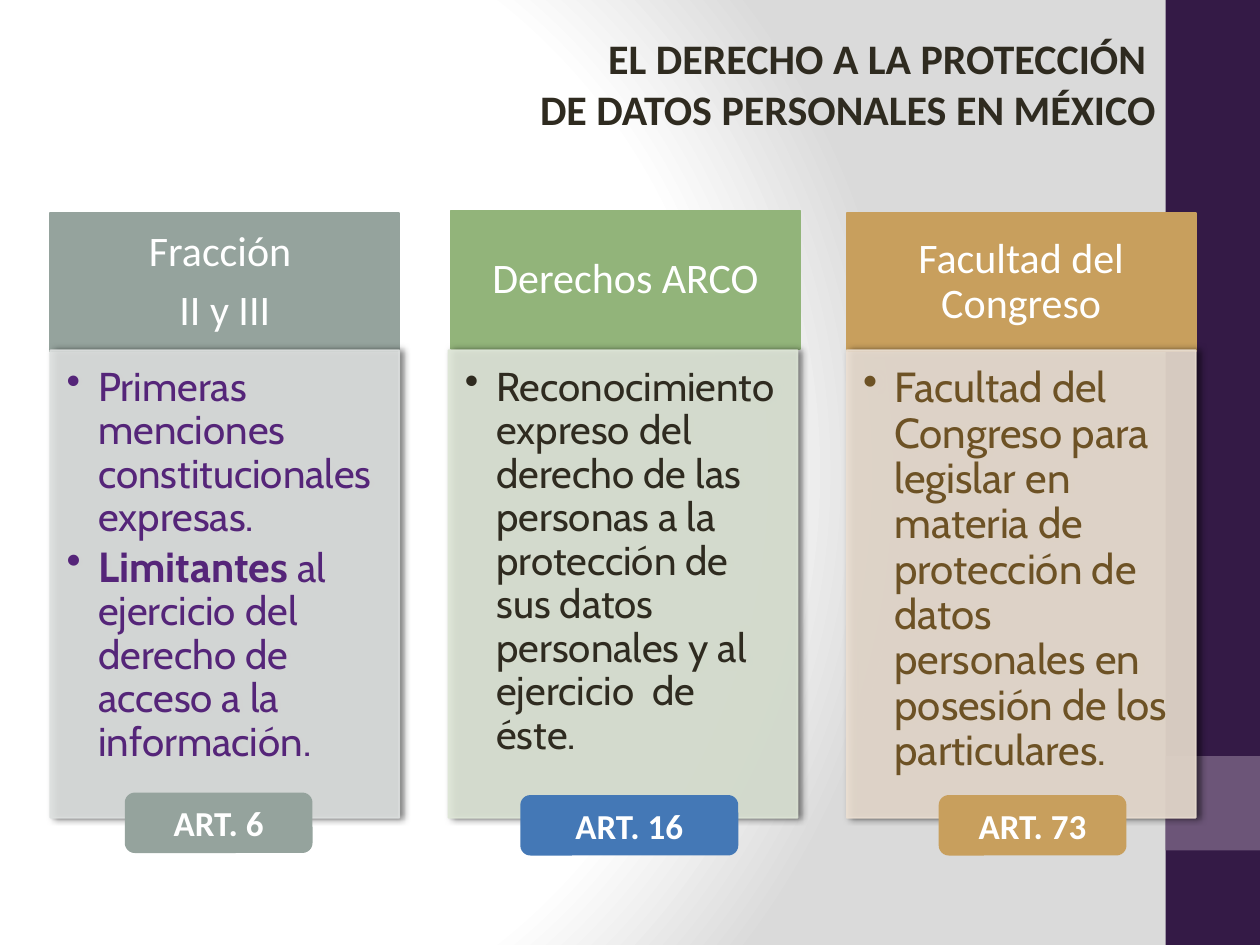
from pptx import Presentation
from pptx.dml.color import RGBColor
from pptx.enum.shapes import MSO_SHAPE as Shape
from pptx.enum.text import MSO_ANCHOR as Anchor, PP_ALIGN as Align
from pptx.oxml import parse_xml
from pptx.oxml.ns import nsdecls, qn
from pptx.util import Inches, Pt
from lxml.etree import SubElement

COLUMNS, ROWS = 40, 30  # quarter-inch grid
HEADING, BODY = "Calibri", "Cabin"
WHITE, DARK = "FFFFFF", "2F2B20"


def color(value):
    return RGBColor.from_string(value)


class SlideBuilder:
    def __init__(self, presentation):
        self.slide = presentation.slides.add_slide(presentation.slide_layouts[6])
        self.column = presentation.slide_width / COLUMNS
        self.row = presentation.slide_height / ROWS

    def place(self, left, top, width, height):
        return (round(left * self.column), round(top * self.row),
                round(width * self.column), round(height * self.row))

    def background(self, inner, outer):
        stops = "".join(
            f'<a:gs pos="{position}000"><a:srgbClr val="{value}"/></a:gs>'
            for position, value in ((0, inner), (75, inner), (100, outer)))
        fill = parse_xml(
            f'<p:bg {nsdecls("p", "a")}><p:bgPr><a:gradFill rotWithShape="1">'
            f'<a:gsLst>{stops}</a:gsLst><a:path path="circle">'
            '<a:fillToRect l="20000" t="50000" r="100000" b="50000"/></a:path>'
            '</a:gradFill><a:effectLst/></p:bgPr></p:bg>')
        self.slide.element.find(qn("p:cSld")).insert(0, fill)

    def block(self, area, fill, outlined=False, kind=Shape.RECTANGLE):
        shape = self.slide.shapes.add_shape(kind, *self.place(*area))
        shape.shadow.inherit = False
        shape.fill.solid()
        shape.fill.fore_color.rgb = color(fill)
        if outlined:
            shape.line.color.rgb = color(fill)
            shape.line.width = Pt(1)
        else:
            shape.line.fill.background()
        return shape

    def frame(self, shape, margins, anchor):
        frame = shape.text_frame
        frame.word_wrap = True
        frame.vertical_anchor = anchor
        (frame.margin_left, frame.margin_top,
         frame.margin_right, frame.margin_bottom) = map(Inches, margins)
        return frame

    def add_text(self, frame, paragraphs, font, size, ink, align,
                 bold=False, spacing=None, after=0, bullet=False):
        """Each paragraph is a list of (text, emphasised) runs."""
        for index, runs in enumerate(paragraphs):
            paragraph = frame.add_paragraph() if index else frame.paragraphs[0]
            if bullet:
                properties = paragraph._p.get_or_add_pPr()
                properties.set("marL", str(Inches(0.25)))
                properties.set("indent", str(-Inches(0.25)))
                SubElement(properties, qn("a:buChar")).set("char", "•")
            paragraph.alignment = align
            paragraph.space_after = Pt(after)
            if spacing:
                paragraph.line_spacing = spacing
            paragraph.font.name = font
            paragraph.font.size = Pt(size)
            paragraph.font.bold = bold
            paragraph.font.color.rgb = color(ink)
            for text, emphasised in runs:
                run = paragraph.add_run()
                run.text = text
                if emphasised:
                    run.font.bold = True
                    run.font.size = Pt(size + 1)

    def title(self, area, lines):
        box = self.slide.shapes.add_textbox(*self.place(*area))
        frame = self.frame(box, (0.1, 0.05, 0.1, 0.05), Anchor.TOP)
        self.add_text(frame, [[(line, False)] for line in lines],
                      HEADING, 24, DARK, Align.RIGHT, bold=True)

    def header(self, area, fill, lines):
        shape = self.block(area, fill, outlined=True)
        frame = self.frame(shape, (0.19, 0.11, 0.19, 0.11), Anchor.MIDDLE)
        self.add_text(frame, [[(line, False)] for line in lines],
                      HEADING, 24, WHITE, Align.CENTER, spacing=0.9, after=8)

    def panel(self, area, fill, paragraphs, size, ink):
        shape = self.block(area, fill, outlined=True)
        properties = shape.element.spPr
        for tint in list(properties.iter(qn("a:srgbClr"))):
            SubElement(tint, qn("a:alpha")).set("val", "90000")
        effects = properties.find(qn("a:effectLst"))
        effects.append(parse_xml(
            f'<a:outerShdw {nsdecls("a")} blurRad="{Pt(4)}" dist="{Pt(2)}" dir="0" '
            'algn="tl" rotWithShape="0"><a:srgbClr val="000000">'
            '<a:alpha val="60000"/></a:srgbClr></a:outerShdw>'))
        frame = self.frame(shape, (0.13, 0.13, 0.18, 0.2), Anchor.TOP)
        self.add_text(frame, paragraphs, BODY, size, ink, Align.LEFT,
                      spacing=0.9, after=3, bullet=True)

    def badge(self, area, fill, text):
        shape = self.block(area, fill, kind=Shape.ROUNDED_RECTANGLE)
        frame = self.frame(shape, (0.1, 0.05, 0.1, 0.05), Anchor.MIDDLE)
        self.add_text(frame, [[(text, False)]], HEADING, 20, WHITE, Align.CENTER, bold=True)


# Header position is (left shift from the card, top); badge is (left, top, width, fill, text)
CARDS = [
    dict(header=(0, 6.76), fill="95A39D", lines=["Fracción ", "II y III"],
         tint="DDE0DF", size=23, ink="552579",
         body=[[("Primeras menciones constitucionales expresas.", False)],
               [("Limitantes ", True),
                ("al ejercicio del derecho de acceso a la información.", False)]],
         badge=(3.96, 25.16, 5.96, "95A39D", "ART. 6")),
    dict(header=(0.08, 6.68), fill="92B47A", lines=["Derechos ARCO"],
         tint="DEE6D7", size=23, ink=DARK,
         body=[[("Reconocimiento expreso del derecho de las personas a la protección "
                 "de sus datos personales y al ejercicio  de éste.", False)]],
         badge=(16.52, 25.24, 6.92, "4478B6", "ART. 16")),
    dict(header=(0, 6.76), fill="C89F5D", lines=["Facultad del Congreso"],
         tint="EBDFD2", size=24, ink="6D5225",
         body=[[("Facultad del Congreso para legislar en materia de protección de "
                 "datos personales en posesión de los particulares.", False)]],
         badge=(29.8, 25.24, 5.96, "C89F5D", "ART. 73")),
]
CARD_LEFT, CARD_STEP, CARD_WIDTH = 1.6, 12.64, 11.08


def main():
    presentation = Presentation()
    presentation.slide_width, presentation.slide_height = Inches(10), Inches(7.5)
    builder = SlideBuilder(presentation)

    # Background and side band
    builder.background(WHITE, "DADADA")
    builder.block((37, 0, 3, 30), "341A46")
    builder.block((37, 24, 3, 3), "6C5578")

    builder.title((4.88, 0.84, 32.2, 3.64),
                  ["EL DERECHO A LA PROTECCIÓN ", "DE DATOS PERSONALES EN MÉXICO"])

    # Cards
    for index, card in enumerate(CARDS):
        left = CARD_LEFT + index * CARD_STEP
        shift, top = card["header"]
        builder.header((left + shift, top, CARD_WIDTH, 4.4), card["fill"], card["lines"])
        builder.panel((left, 11.12, CARD_WIDTH, 14.84), card["tint"],
                      card["body"], card["size"], card["ink"])

    # Article badges
    for card in CARDS:
        left, top, width, fill, text = card["badge"]
        builder.badge((left, top, width, 1.92), fill, text)

    presentation.save("out.pptx")


if __name__ == "__main__":
    main()
